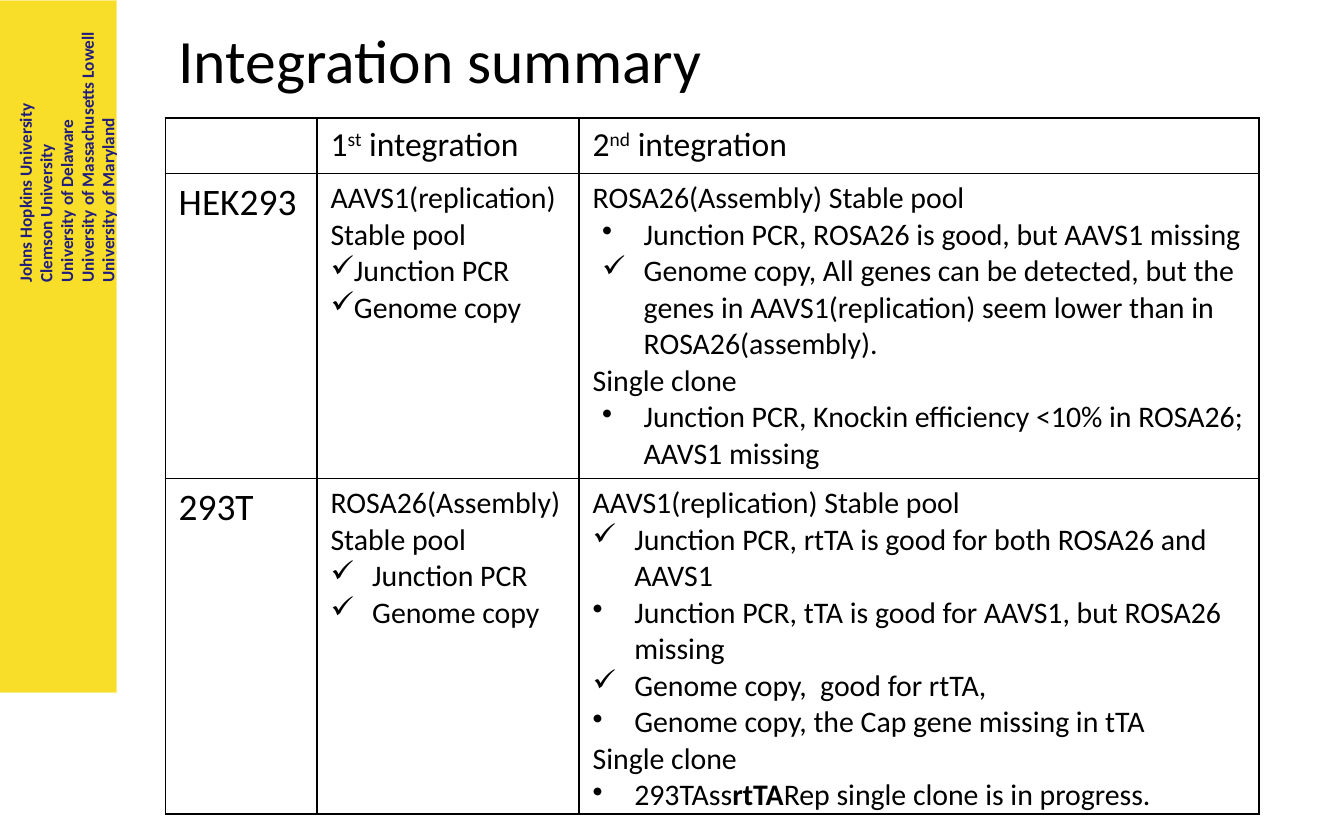
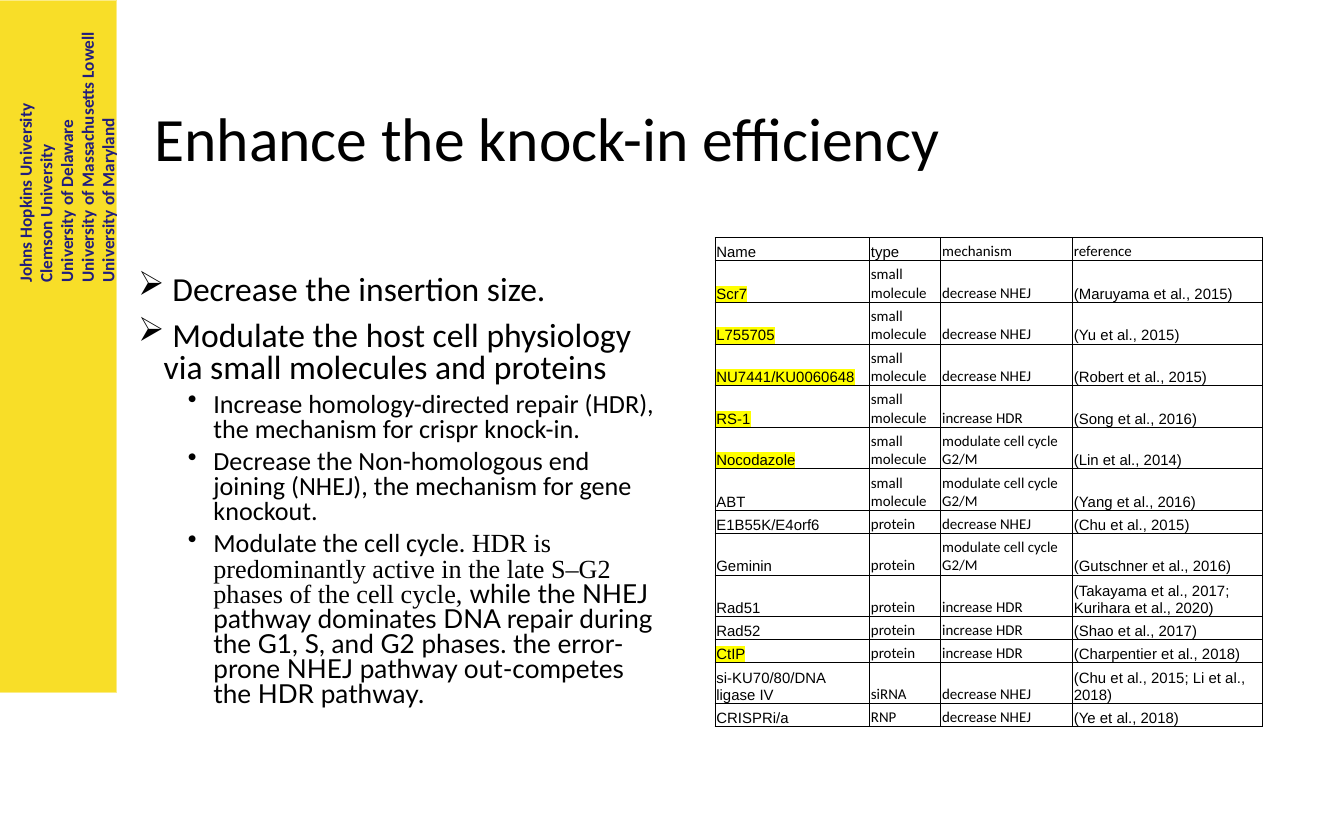
from lxml.etree import SubElement
from pptx import Presentation
from pptx.dml.color import RGBColor
from pptx.enum.shapes import MSO_SHAPE
from pptx.enum.text import MSO_ANCHOR, MSO_AUTO_SIZE, PP_ALIGN
from pptx.oxml.ns import qn
from pptx.util import Inches, Pt

HUES = {"band": "F8DE28", "edge": "FBEC85", "navy": "211D7D",
        "ink": "000000", "mark": "FFFF00"}

SCHOOLS = ["Johns Hopkins University", "Clemson University",
           "University of Delaware", "University of Massachusetts Lowell",
           "University of Maryland"]

TICK, DOT, ARROW = "✓", "•", "➢"


def item(*runs, sign=None, left=0.31, hang=0.31, **form):
    return {"runs": runs, "sign": sign, "left": left, "hang": hang, "form": form}


def tick(*runs, **form):
    return item(*runs, sign=TICK, **form)


def dot(*runs, **form):
    return item(*runs, sign=DOT, **form)


def head(num, suffix):
    return [item(num, (suffix, {"raised": True}), " integration")]


DEEP = {"left": 0.38, "level": 1}
POINT = {"sign": ARROW, "left": 0.19, "hang": 0.19, "line_spacing": 0.8}
SUB = {"left": 0.56, "hang": 0.19, "level": 1, "line_spacing": 0.8,
       "space_before": Pt(3.8), "size": 14}

SUMMARY = [
    [[], head("1", "st"), head("2", "nd")],
    [[item("HEK293", size=20)],
     [item("AAVS1(replication) Stable pool"),
      tick("Junction PCR", left=0),
      tick("Genome copy", left=0)],
     [item("ROSA26(Assembly) Stable pool"),
      dot("Junction PCR, ROSA26 is good, but AAVS1 missing", **DEEP),
      tick("Genome copy, All genes can be detected, but the genes in "
           "AAVS1(replication) seem lower than in ROSA26(assembly).", **DEEP),
      item("Single clone"),
      dot("Junction PCR, Knockin efficiency <10% in ROSA26; AAVS1 missing",
          **DEEP)]],
    [[item("293T", size=20)],
     [item("ROSA26(Assembly) Stable pool"),
      tick("Junction PCR"),
      tick("Genome copy")],
     [item("AAVS1(replication) Stable pool"),
      tick("Junction PCR, rtTA is good for both ROSA26 and AAVS1"),
      dot("Junction PCR, tTA is good for AAVS1, but ROSA26 missing"),
      tick("Genome copy,  good for rtTA,"),
      dot("Genome copy, the Cap gene missing in tTA"),
      item("Single clone"),
      dot("293TAss", ("rtTA", {"bold": True}),
          "Rep single clone is in progress.")]],
]

PLANS = [
    item(" Decrease the insertion size.", **POINT),
    item(" Modulate the host cell physiology via small molecules and proteins",
         space_before=Pt(7.5), **POINT),
    dot("Increase homology-directed repair (HDR), the mechanism for crispr "
        "knock-in.", **SUB),
    dot("Decrease the Non-homologous end joining (NHEJ), the mechanism for "
        "gene knockout.", **SUB),
    dot("Modulate the cell cycle. ",
        ("HDR is predominantly active in the late S–G2 phases of the cell "
         "cycle, ", {"name": "Times New Roman"}),
        ("while the NHEJ pathway dominates DNA repair during the G1, S, and G2 "
         "phases. the error-prone NHEJ pathway out-competes the HDR pathway.",
         {"name": "Lato"}), **SUB),
]

SMALL, LESS, MORE = "small molecule", "decrease NHEJ", "increase HDR"
CYCLE = "modulate cell cycle G2/M"
AGENTS = [
    ("Name", "type", "mechanism", "reference"),
    ("Scr7", SMALL, LESS, "(Maruyama et al., 2015)"),
    ("L755705", SMALL, LESS, "(Yu et al., 2015)"),
    ("NU7441/KU0060648", SMALL, LESS, "(Robert et al., 2015)"),
    ("RS-1", SMALL, MORE, "(Song et al., 2016)"),
    ("Nocodazole", SMALL, CYCLE, "(Lin et al., 2014)"),
    ("ABT", SMALL, CYCLE, "(Yang et al., 2016)"),
    ("E1B55K/E4orf6", "protein", LESS, "(Chu et al., 2015)"),
    ("Geminin", "protein", CYCLE, "(Gutschner et al., 2016)"),
    ("Rad51", "protein", MORE, "(Takayama et al., 2017; Kurihara et al., 2020)"),
    ("Rad52", "protein", MORE, "(Shao et al., 2017)"),
    ("CtIP", "protein", MORE, "(Charpentier et al., 2018)"),
    ("si-KU70/80/DNA ligase IV", "siRNA", LESS,
     "(Chu et al., 2015; Li et al., 2018)"),
    ("CRISPRi/a", "RNP", LESS, "(Ye et al., 2018)"),
]
KEY = {"Scr7", "L755705", "NU7441/KU0060648", "RS-1", "Nocodazole", "CtIP"}
SHORT = {"Name", "E1B55K/E4orf6", "Rad52", "CtIP", "CRISPRi/a"}
HEADS = ["Arial", "Arial", "Calibri", "Calibri"]
FACES = ["Arial", "Calibri", "Calibri", "Arial"]


def put(thing, form):
    for key, value in form.items():
        setattr(thing, key, value)


def hue(name):
    return RGBColor.from_string(HUES[name])


def inch(*sizes):
    return [Inches(size) for size in sizes]


class Deck:
    def __init__(self):
        self.show = Presentation()
        put(self.show, {"slide_width": Inches(10), "slide_height": Inches(6.25)})
        self.slide = None

    def page(self, title, *place):
        self.slide = self.show.slides.add_slide(self.show.slide_layouts[6])
        self.band()
        self.box(place, [item(title, line_spacing=0.9)], 33, MSO_ANCHOR.MIDDLE)

    def rect(self, *place):
        shape = self.slide.shapes.add_shape(MSO_SHAPE.RECTANGLE, *inch(*place))
        shape.shadow.inherit = False
        shape.fill.solid()
        shape.fill.fore_color.rgb = hue("band")
        return shape

    def band(self):
        bar = self.rect(0, 0, 0.87, 5.15)
        bar.line.color.rgb = hue("edge")
        bar.line.width = Pt(0.5)
        names = self.rect(-0.6, 0.78, 2.08, 0.76)
        names.rotation = 270
        names.line.fill.background()
        put(names.text_frame, {"word_wrap": False,
                               "auto_size": MSO_AUTO_SIZE.SHAPE_TO_FIT_TEXT,
                               "vertical_anchor": MSO_ANCHOR.TOP})
        self.text(names.text_frame, [item(name) for name in SCHOOLS],
                  9.2, tone="navy", bold=True)

    def box(self, place, items, size, anchor=MSO_ANCHOR.TOP):
        frame = self.slide.shapes.add_textbox(*inch(*place)).text_frame
        put(frame, {"word_wrap": True, "vertical_anchor": anchor})
        self.text(frame, items, size)

    def text(self, frame, items, size, tone="ink", **base):
        for i, part in enumerate(items):
            para = frame.add_paragraph() if i else frame.paragraphs[0]
            form = dict(part["form"])
            font = {"name": "Calibri", "size": Pt(form.pop("size", size)), **base}
            if part["sign"]:
                props = para._p.get_or_add_pPr()
                props.set("marL", str(Inches(part["left"])))
                props.set("indent", str(-Inches(part["hang"])))
                SubElement(props, qn("a:buChar"), char=part["sign"])
            put(para, {"alignment": PP_ALIGN.LEFT, **form})
            for run in part["runs"]:
                words, extra = (run, {}) if isinstance(run, str) else run
                self.run(para, words, tone, {**font, **extra})

    def run(self, para, words, tone, font):
        run = para.add_run()
        run.text = words
        raised, lit = font.pop("raised", False), font.pop("lit", False)
        run.font.color.rgb = hue(tone)
        props = run._r.get_or_add_rPr()
        if lit:
            glow = SubElement(props, qn("a:highlight"))
            SubElement(glow, qn("a:srgbClr"), val=HUES["mark"])
        if raised:
            props.set("baseline", "30000")
        put(run.font, font)

    def table(self, place, cols, rows, cells, size, line, form):
        shape = self.slide.shapes.add_table(len(rows), len(cols), *inch(*place))
        grid = shape.table
        put(grid, {"first_row": False, "horz_banding": False})
        for col, wide in zip(grid.columns, cols):
            col.width = Inches(wide)
        for row, high, items in zip(grid.rows, rows, cells):
            row.height = Inches(high)
            for cell, paras in zip(row.cells, items):
                put(cell, form)
                self.edge(cell, line)
                self.text(cell.text_frame, paras, size)

    def edge(self, cell, line):
        props = cell._tc.get_or_add_tcPr()
        for side in "LRTB":
            rule = SubElement(props, qn(f"a:ln{side}"), w=str(Pt(line)))
            fill = SubElement(rule, qn("a:solidFill"))
            SubElement(fill, qn("a:srgbClr"), val=HUES["ink"])
        cell.fill.background()


def main():
    deck = Deck()

    deck.page("Integration summary", 1.23, -0.13, 8.62, 1.21)
    for part in (part for row in SUMMARY[1:] for cell in row for part in cell):
        part["form"].setdefault("size", 16)
    deck.table((1.23, 0.88, 8.14, 5.14), [1.13, 1.95, 5.06], [0.41, 2.27, 2.46],
               SUMMARY, 18, 1, {})

    deck.page("Enhance the knock-in efficiency", 1.05, 0.45, 7.7, 1.21)
    deck.box((0.93, 2, 4.07, 3.57), PLANS, 18)
    cells = [[[item((word, {"name": face, "lit": word in KEY}))]
              for word, face in zip(row, FACES if i else HEADS)]
             for i, row in enumerate(AGENTS)]
    rows = [0.17 if row[0] in SHORT else 0.31 for row in AGENTS]
    thin = Inches(0.01)
    deck.table((5.32, 1.77, 4.07, 3.65), [1.15, 0.53, 0.98, 1.41], rows, cells,
               8, 0.5, {"margin_left": thin, "margin_right": thin,
                        "margin_top": thin, "margin_bottom": 0,
                        "vertical_anchor": MSO_ANCHOR.BOTTOM})

    deck.show.save("out.pptx")


if __name__ == "__main__":
    main()
